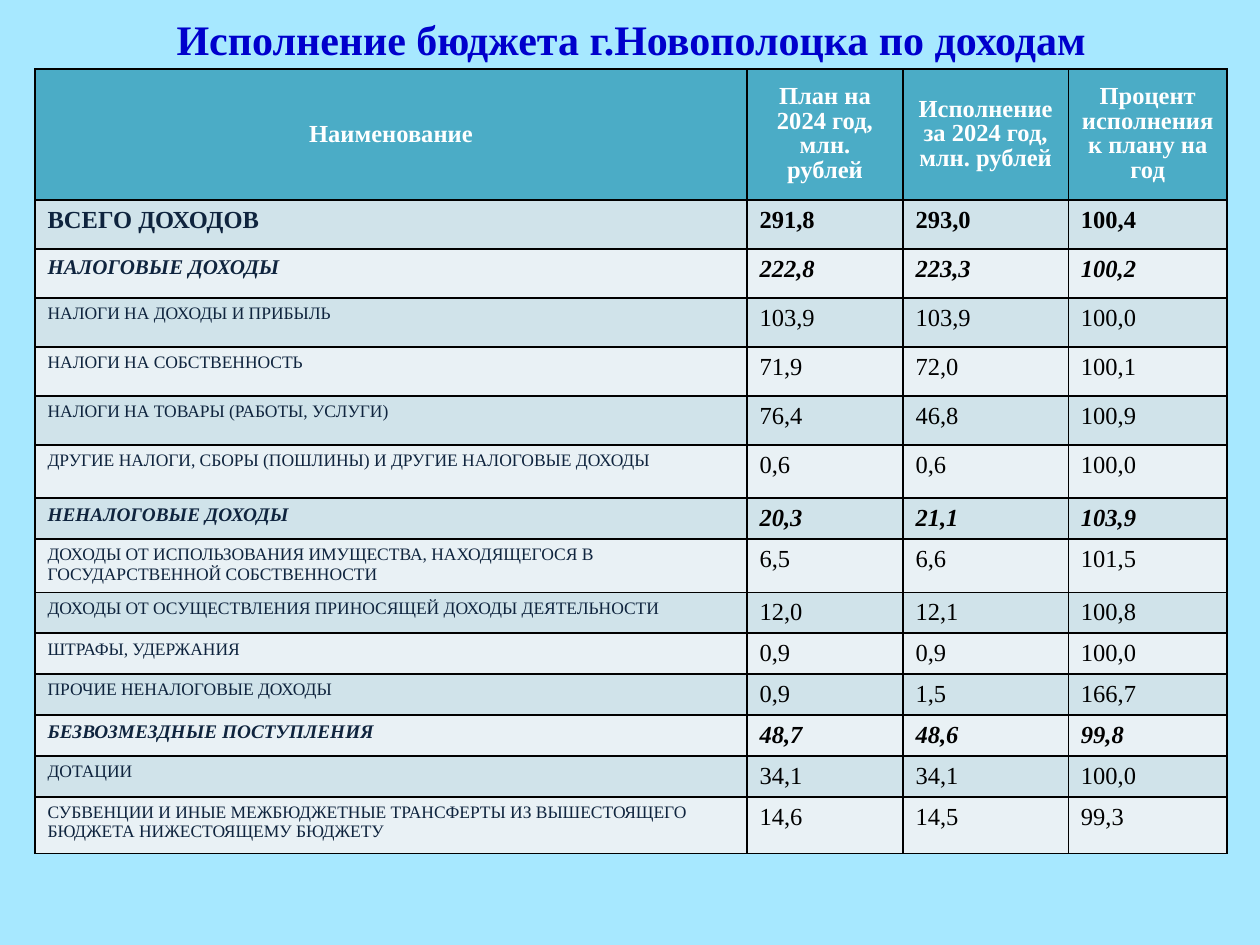
from lxml import etree
from pptx import Presentation
from pptx.dml.color import RGBColor
from pptx.enum.text import MSO_ANCHOR, MSO_AUTO_SIZE, PP_ALIGN
from pptx.oxml.ns import qn
from pptx.util import Pt

CENTER, LEFT = PP_ALIGN.CENTER, PP_ALIGN.LEFT
MIDDLE, TOP = MSO_ANCHOR.MIDDLE, MSO_ANCHOR.TOP
NO_AUTOFIT = MSO_AUTO_SIZE.NONE

# Content
TITLE = "Исполнение бюджета г.Новополоцка по доходам"
HEADERS = [
    "Наименование",
    "План на 2024 год, млн. рублей",
    "Исполнение за 2024 год, млн. рублей",
    "Процент исполнения к плану на год",
]
# kind of row, height, name, plan, actual, percent
ROWS = [
    ("total", 28, "ВСЕГО ДОХОДОВ", "291,8", "293,0", "100,4"),
    ("group", 28, "НАЛОГОВЫЕ ДОХОДЫ", "222,8", "223,3", "100,2"),
    ("item", 28, "НАЛОГИ НА ДОХОДЫ И ПРИБЫЛЬ", "103,9", "103,9", "100,0"),
    ("item", 28, "НАЛОГИ НА СОБСТВЕННОСТЬ", "71,9", "72,0", "100,1"),
    ("item", 28, "НАЛОГИ НА ТОВАРЫ (РАБОТЫ, УСЛУГИ)", "76,4", "46,8", "100,9"),
    ("item", 30.4, "ДРУГИЕ НАЛОГИ, СБОРЫ (ПОШЛИНЫ) И ДРУГИЕ НАЛОГОВЫЕ ДОХОДЫ",
     "0,6", "0,6", "100,0"),
    ("subgroup", 23.4, "НЕНАЛОГОВЫЕ ДОХОДЫ", "20,3", "21,1", "103,9"),
    ("item", 30.4, "ДОХОДЫ ОТ ИСПОЛЬЗОВАНИЯ ИМУЩЕСТВА, НАХОДЯЩЕГОСЯ В "
     "ГОСУДАРСТВЕННОЙ СОБСТВЕННОСТИ", "6,5", "6,6", "101,5"),
    ("item", 23.4, "ДОХОДЫ ОТ ОСУЩЕСТВЛЕНИЯ ПРИНОСЯЩЕЙ ДОХОДЫ ДЕЯТЕЛЬНОСТИ",
     "12,0", "12,1", "100,8"),
    ("item", 23.4, "ШТРАФЫ, УДЕРЖАНИЯ", "0,9", "0,9", "100,0"),
    ("item", 23.4, "ПРОЧИЕ НЕНАЛОГОВЫЕ ДОХОДЫ", "0,9", "1,5", "166,7"),
    ("subgroup", 23.4, "БЕЗВОЗМЕЗДНЫЕ ПОСТУПЛЕНИЯ", "48,7", "48,6", "99,8"),
    ("item", 23.4, "ДОТАЦИИ", "34,1", "34,1", "100,0"),
    ("item", 32.4, "СУБВЕНЦИИ И ИНЫЕ МЕЖБЮДЖЕТНЫЕ ТРАНСФЕРТЫ ИЗ ВЫШЕСТОЯЩЕГО "
     "БЮДЖЕТА НИЖЕСТОЯЩЕМУ БЮДЖЕТУ", "14,6", "14,5", "99,3"),
]

THEME = {
    "font": "Times New Roman",
    "background": "A7E8FF", "title": "0000CC", "border": "000000",
    "header_fill": "4BACC6", "header_text": "FFFFFF",
    "bands": ("D0E3EA", "E9F1F5"), "name": "0F243E", "value": "000000",
    "title_size": 24, "table_size": 14,
    # name size, bold, italic
    "kinds": {"total": (14, True, False), "group": (12, True, True),
              "subgroup": (11, True, True), "item": (10, False, False)},
}

# Layout
SLIDE_W, SLIDE_H = 720, 540
TITLE_BOX = (36.7, 2.9, 648, 23)
TABLE_LEFT, TABLE_TOP = 20, 39.4
COL_WIDTHS = [406.8, 89.2, 94.5, 90.8]
HEADER_H = 75
BORDER_W = 1


def add_text(tf, text, size, color, bold, italic=False, align=LEFT, spacing=None):
    p = tf.paragraphs[0]
    p.alignment = align
    if spacing:
        p.line_spacing = Pt(spacing)
    r = p.add_run()
    r.text = text
    font = r.font
    font.name, font.size = THEME["font"], Pt(size)
    font.bold, font.italic = bold, italic
    font.color.rgb = RGBColor.from_string(color)


def format_cell(cell, fill, anchor):
    tc_pr = cell._tc.get_or_add_tcPr()
    for side in ("a:lnL", "a:lnR", "a:lnT", "a:lnB"):
        ln = etree.SubElement(tc_pr, qn(side), w=str(Pt(BORDER_W)))
        solid = etree.SubElement(ln, qn("a:solidFill"))
        etree.SubElement(solid, qn("a:srgbClr"), val=THEME["border"])
    cell.fill.solid()
    cell.fill.fore_color.rgb = RGBColor.from_string(fill)
    cell.vertical_anchor = anchor


def add_title(s):
    sp = s.shapes.title
    sp.left, sp.top, sp.width, sp.height = map(Pt, TITLE_BOX)
    tf = sp.text_frame
    tf.word_wrap, tf.auto_size, tf.vertical_anchor = True, NO_AUTOFIT, MIDDLE
    add_text(tf, TITLE, THEME["title_size"], THEME["title"], True,
             align=CENTER, spacing=44)


def add_budget_table(s):
    heights = [HEADER_H] + [row[1] for row in ROWS]
    table = s.shapes.add_table(
        len(heights), len(COL_WIDTHS), Pt(TABLE_LEFT), Pt(TABLE_TOP),
        Pt(sum(COL_WIDTHS)), Pt(sum(heights))).table
    for col, width in zip(table.columns, COL_WIDTHS):
        col.width = Pt(width)
    for row, height in zip(table.rows, heights):
        row.height = Pt(height)

    # Header row
    size = THEME["table_size"]
    for c, text in enumerate(HEADERS):
        cell = table.cell(0, c)
        format_cell(cell, THEME["header_fill"], MIDDLE)
        add_text(cell.text_frame, text, size, THEME["header_text"], True,
                 align=CENTER, spacing=14 if c else None)

    # Income rows in alternating bands
    for i, (kind, _, *texts) in enumerate(ROWS):
        name_size, bold, italic = THEME["kinds"][kind]
        for c, text in enumerate(texts):
            cell = table.cell(i + 1, c)
            format_cell(cell, THEME["bands"][i % 2], TOP)
            add_text(cell.text_frame, text, size if c else name_size,
                     THEME["value" if c else "name"], bold, italic)


def main():
    prs = Presentation()
    prs.slide_width, prs.slide_height = Pt(SLIDE_W), Pt(SLIDE_H)
    s = prs.slides.add_slide(prs.slide_layouts[5])
    s.background.fill.solid()
    s.background.fill.fore_color.rgb = RGBColor.from_string(THEME["background"])
    add_title(s)
    add_budget_table(s)
    prs.save("out.pptx")


if __name__ == "__main__":
    main()
